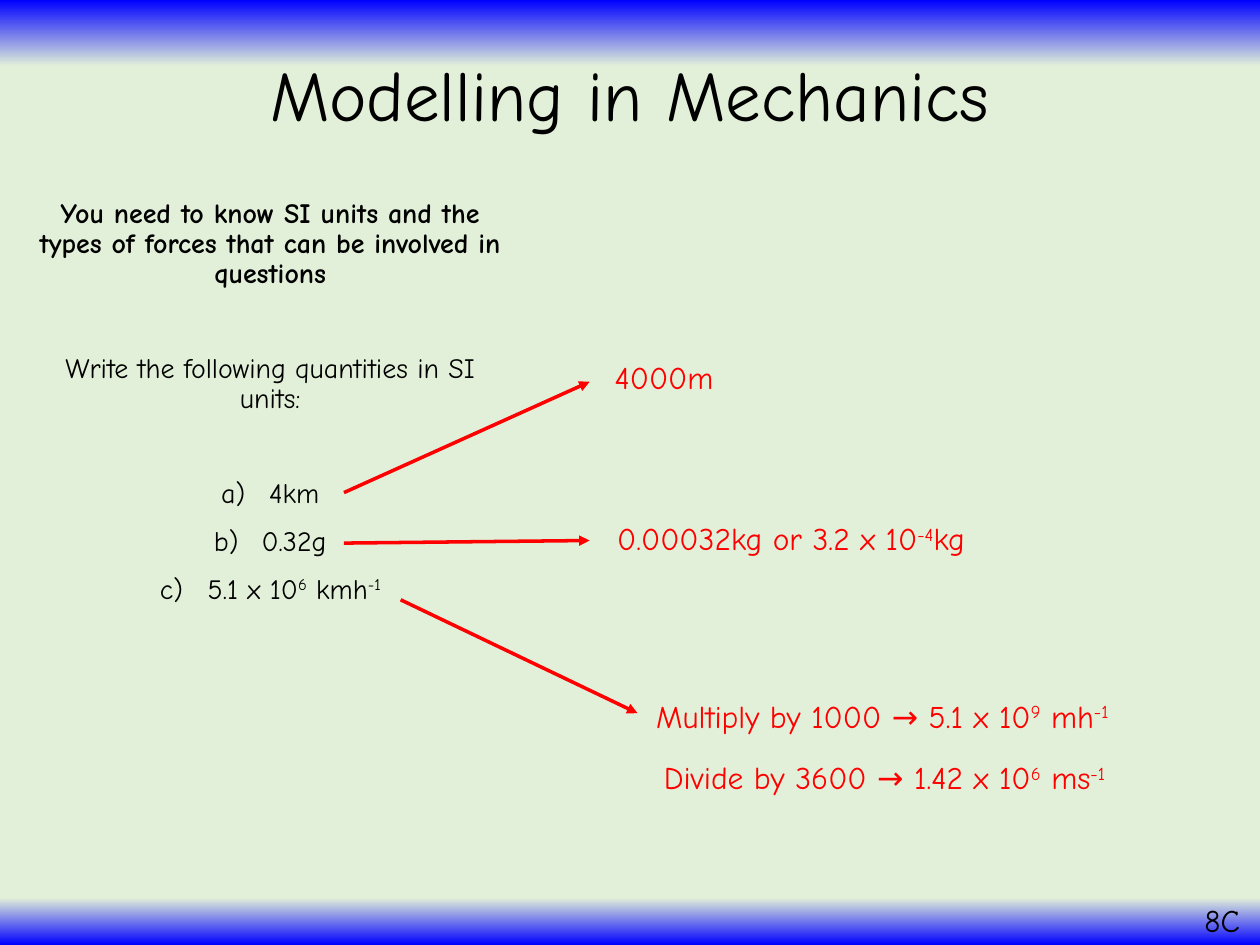
from dataclasses import dataclass

from lxml.etree import SubElement
from pptx import Presentation
from pptx.dml.color import RGBColor as Color
from pptx.enum.shapes import MSO_CONNECTOR as Connector
from pptx.enum.text import MSO_ANCHOR as Anchor, MSO_AUTO_SIZE as AutoSize, PP_ALIGN as Align
from pptx.oxml.ns import qn
from pptx.util import Inches, Pt


@dataclass(frozen=True)
class Theme:
    font: str = "Comic Neue"
    ink: str = "000000"
    answer: str = "FF0000"
    edge: str = "0000FF"
    page: str = "E2F0D9"
    title_size: float = 40.5
    body_size: float = 16
    answer_size: float = 18
    line_spacing: float = 0.9
    gap: float = 10
    section_gap: float = 37
    arrow_width: float = 2


THEME = Theme()
WIDTH, HEIGHT = Inches(10), Inches(7.5)

# Odd-numbered parts of each text tuple are superscripts.
TITLE = ("Modelling in Mechanics",)
OBJECTIVE = ("You need to know SI units and the types of forces that can be involved in questions",)
TASK = ("Write the following quantities in SI units:",)
QUANTITIES = [("4km",), ("0.32g",), ("5.1 x 10", "6", " kmh", "-1")]
SECTION = ("8C",)

TITLE_AREA = (6.9, 3.2, 86.2, 14.53)
BODY_AREA = (1.6, 20.4, 39.7, 69.6)
SECTION_AREA = (94.6, 94.67, 5.2, 5.33)
ANSWERS = [
    (("4000m",), (47.8, 37.2, 10.2, 5.33)),
    (("0.00032kg or 3.2 x 10", "-4", "kg"), (48, 54.27, 33.3, 5.33)),
    (("Multiply by 1000 → 5.1 x 10", "9", " mh", "-1"), (51.1, 73.07, 42.6, 5.33)),
    (("Divide by 3600 → 1.42 x 10", "6", " ms", "-1"), (51.7, 79.6, 42.4, 5.33)),
]
ARROWS = [
    (27.3, 52.13, 46.8, 40.4),
    (27.3, 57.47, 46.8, 57.2),
    (31.8, 63.47, 50.6, 75.47),
]
BACKGROUND_STOPS = [(0, THEME.edge), (7, THEME.page), (95, THEME.page), (100, THEME.edge)]


def place(percentages):
    return [round(share * side / 100) for share, side in zip(percentages, (WIDTH, HEIGHT) * 2)]


def paint_background(slide):
    fill = slide.background.fill
    fill.gradient()
    fill.gradient_angle = 270
    stops = next(slide.element.iter(qn("a:gsLst")))
    for stop in list(stops):
        stops.remove(stop)
    for position, color in BACKGROUND_STOPS:
        stop = SubElement(stops, qn("a:gs"), pos=str(position * 1000))
        SubElement(stop, qn("a:srgbClr"), val=color)


def add_frame(slide, area, wrap=True):
    frame = slide.shapes.add_textbox(*place(area)).text_frame
    frame.word_wrap = wrap
    frame.auto_size = AutoSize.NONE if wrap else AutoSize.SHAPE_TO_FIT_TEXT
    return frame


def write(paragraph, parts, size, color=THEME.ink, bold=False):
    font = paragraph.font
    font.name, font.size, font.bold = THEME.font, Pt(size), bold
    font.color.rgb = Color.from_string(color)
    for index, part in enumerate(parts):
        run = paragraph.add_run()
        run.text = part
        if index % 2:
            run.font._element.set("baseline", "30000")


def center(paragraph, gap=0):
    paragraph.alignment = Align.CENTER
    paragraph.line_spacing = THEME.line_spacing
    paragraph.space_before = Pt(gap)


def number(paragraph):
    properties = paragraph._p.get_or_add_pPr()
    indent = Inches(0.38)
    properties.set("marL", str(indent))
    properties.set("indent", str(-indent))
    bullet = properties.makeelement(qn("a:buAutoNum"), {"type": "alphaLcParenR"})
    properties.find(qn("a:spcBef")).addnext(bullet)


def add_title(slide):
    frame = add_frame(slide, TITLE_AREA)
    frame.vertical_anchor = Anchor.MIDDLE
    center(frame.paragraphs[0])
    write(frame.paragraphs[0], TITLE, THEME.title_size)


def add_questions(slide):
    frame = add_frame(slide, BODY_AREA)
    rows = [(OBJECTIVE, THEME.gap), (TASK, THEME.section_gap)]
    rows += [(parts, THEME.gap if index else THEME.section_gap)
             for index, parts in enumerate(QUANTITIES)]
    for index, (parts, gap) in enumerate(rows):
        paragraph = frame.add_paragraph() if index else frame.paragraphs[0]
        center(paragraph, gap)
        write(paragraph, parts, THEME.body_size, bold=parts is OBJECTIVE)
        if parts in QUANTITIES:
            number(paragraph)


def add_label(slide, parts, area, color):
    frame = add_frame(slide, area, wrap=False)
    write(frame.paragraphs[0], parts, THEME.answer_size, color)


def add_arrow(slide, ends):
    arrow = slide.shapes.add_connector(Connector.STRAIGHT, *place(ends))
    arrow.line.color.rgb = Color.from_string(THEME.answer)
    arrow.line.width = Pt(THEME.arrow_width)
    SubElement(arrow.line._get_or_add_ln(), qn("a:tailEnd"), type="triangle")
    SubElement(arrow._element.spPr, qn("a:effectLst"))


def main():
    presentation = Presentation()
    presentation.slide_width, presentation.slide_height = WIDTH, HEIGHT
    slide = presentation.slides.add_slide(presentation.slide_layouts[6])
    paint_background(slide)
    add_title(slide)
    add_questions(slide)
    add_label(slide, SECTION, SECTION_AREA, THEME.ink)
    for ends in ARROWS:
        add_arrow(slide, ends)
    for parts, area in ANSWERS:
        add_label(slide, parts, area, THEME.answer)
    presentation.save("out.pptx")


if __name__ == "__main__":
    main()
